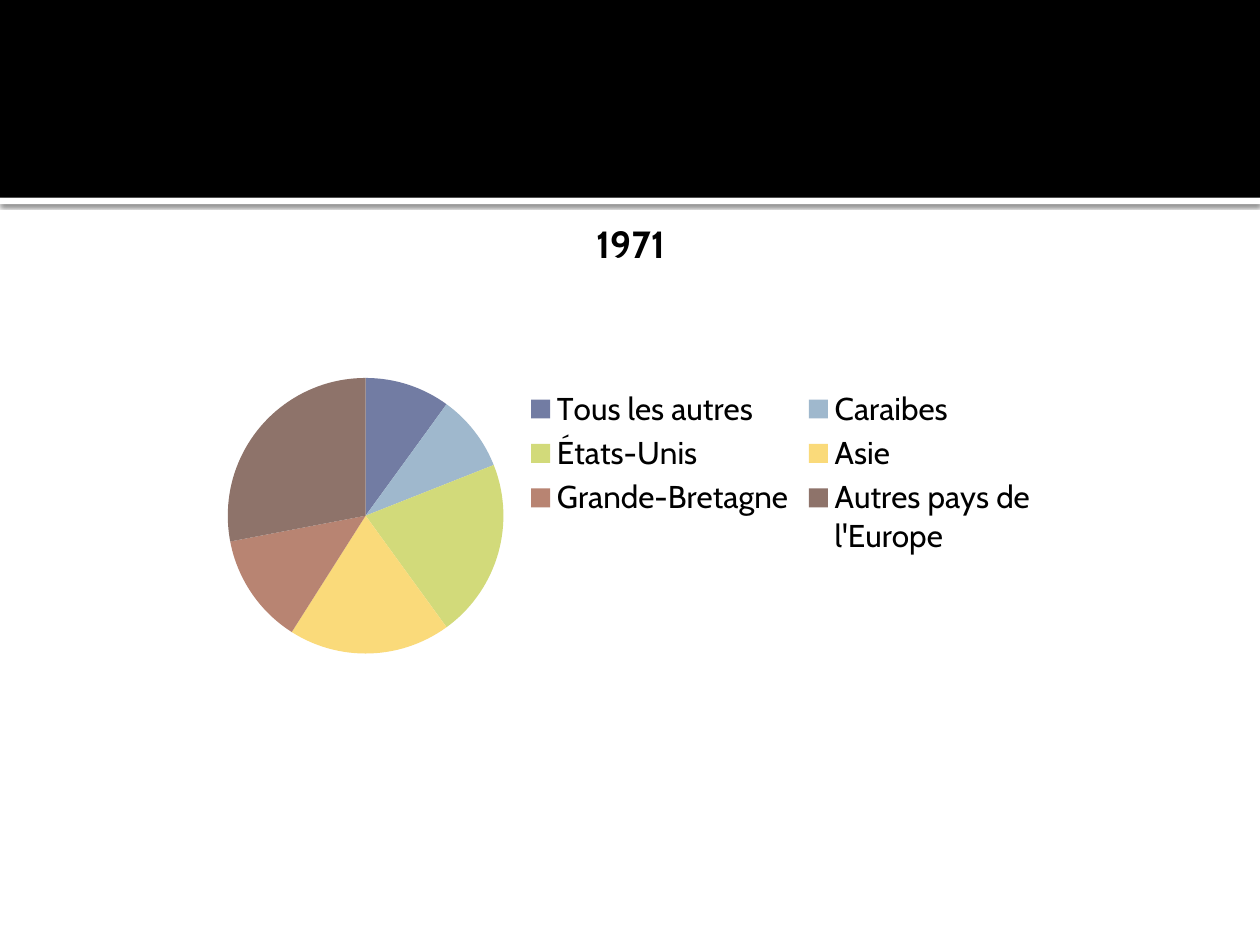
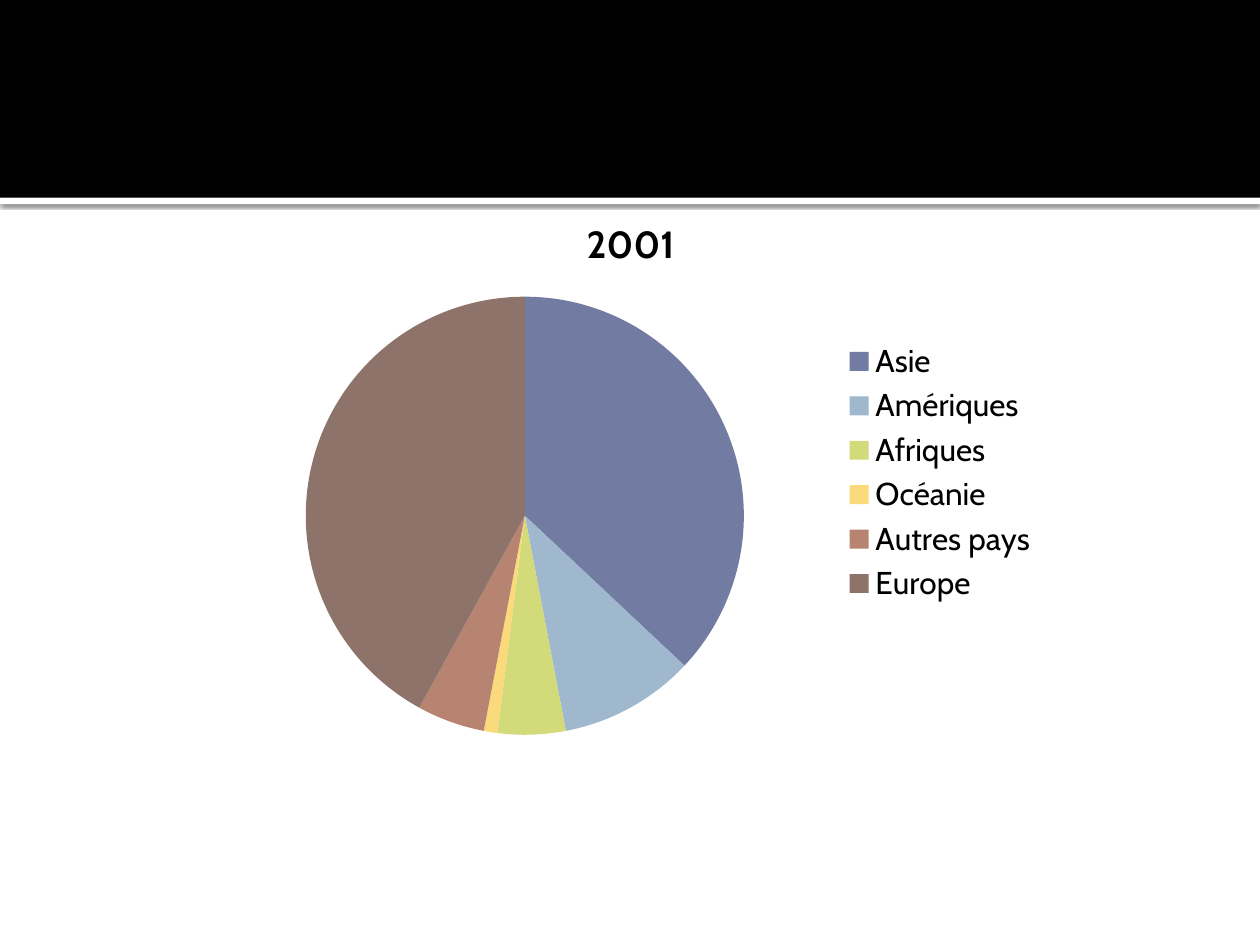
from dataclasses import dataclass

from pptx import Presentation
from pptx import util as u
from pptx.chart.data import CategoryChartData
from pptx.dml.color import RGBColor
from pptx.enum import chart as charts, shapes
from pptx.oxml import parse_xml
from pptx.oxml.ns import nsdecls, qn


@dataclass(frozen=True)
class Theme:
    font: str = "Cabin"
    ink: str = "000000"
    paper: str = "FFFFFF"
    slices: tuple = ("727CA3", "9FB8CD", "D2DA7A", "FADA7A", "B88472", "8E736A")
    legend_size: float = 18
    title_size: float = 21.6


class Deck:
    WIDTH, HEIGHT = u.Inches(10), u.Inches(7.5)
    BAND_HEIGHT, STRIP_HEIGHT = u.Inches(1.57), u.Inches(0.05)

    def __init__(self, theme):
        self.theme = theme
        self.presentation = Presentation()
        self.presentation.slide_width = self.WIDTH
        self.presentation.slide_height = self.HEIGHT
        self.slide = None

    def add_slide(self):
        """Start a blank slide with the shared header band."""
        self.slide = self.presentation.slides.add_slide(self.presentation.slide_layouts[6])
        background = self.slide.background.fill
        background.solid()
        background.fore_color.rgb = RGBColor.from_string(self.theme.paper)
        strip = self.add_bar(self.BAND_HEIGHT, self.STRIP_HEIGHT, self.theme.paper)
        self.add_shadow(strip)
        self.add_bar(0, self.BAND_HEIGHT, self.theme.ink)

    def add_bar(self, top, height, color):
        """Add a plain rectangle across the whole slide."""
        shape = self.slide.shapes.add_shape(
            shapes.MSO_SHAPE.RECTANGLE, 0, top, self.WIDTH, height)
        shape.shadow.inherit = False
        shape.fill.solid()
        shape.fill.fore_color.rgb = RGBColor.from_string(color)
        shape.line.fill.background()
        return shape

    def add_shadow(self, shape):
        """Cast a soft shadow straight down."""
        effects = shape.element.spPr.find(qn("a:effectLst"))
        effects.append(parse_xml(
            f'<a:outerShdw {nsdecls("a")} blurRad="{u.Pt(2.5)}" dist="{u.Pt(0.8)}" '
            f'dir="5400000" algn="tl" rotWithShape="0"><a:srgbClr val="{self.theme.ink}">'
            '<a:alpha val="60000"/></a:srgbClr></a:outerShdw>'))

    def style_font(self, font, size, bold=False):
        font.name = self.theme.font
        font.size = u.Pt(size)
        font.bold = bold
        font.color.rgb = RGBColor.from_string(self.theme.ink)

    def add_pie(self, title, shares):
        data = CategoryChartData()
        data.categories = list(shares)
        data.add_series(title, list(shares.values()))
        chart = self.slide.shapes.add_chart(
            charts.XL_CHART_TYPE.PIE, u.Inches(1.67), u.Inches(1.53),
            u.Inches(6.67), u.Inches(4.44), data).chart
        self.style_font(chart.font, self.theme.legend_size)

        chart.has_title = True
        title_frame = chart.chart_title.text_frame
        title_frame.text = title
        self.style_font(title_frame.paragraphs[0].runs[0].font, self.theme.title_size, bold=True)

        chart.has_legend = True
        chart.legend.position = charts.XL_LEGEND_POSITION.RIGHT
        chart.legend.include_in_layout = False
        self.style_font(chart.legend.font, self.theme.legend_size)

        plot = chart.plots[0]
        plot.vary_by_categories = True
        for index, color in enumerate(self.theme.slices):
            slice_format = plot.series[0].points[index].format
            slice_format.fill.solid()
            slice_format.fill.fore_color.rgb = RGBColor.from_string(color)
            slice_format.line.fill.background()


ORIGINS_BY_YEAR = {
    "1971": {
        "Tous les autres": 10,
        "Caraibes": 9,
        "États-Unis": 21,
        "Asie": 19,
        "Grande-Bretagne": 13,
        "Autres pays de l'Europe": 28,
    },
    "2001": {
        "Asie": 37,
        "Amériques": 10,
        "Afriques": 5,
        "Océanie": 1,
        "Autres pays": 5,
        "Europe": 42,
    },
}


def main():
    deck = Deck(Theme())
    for year, shares in ORIGINS_BY_YEAR.items():
        deck.add_slide()
        deck.add_pie(year, shares)
    deck.presentation.save("out.pptx")


if __name__ == "__main__":
    main()
